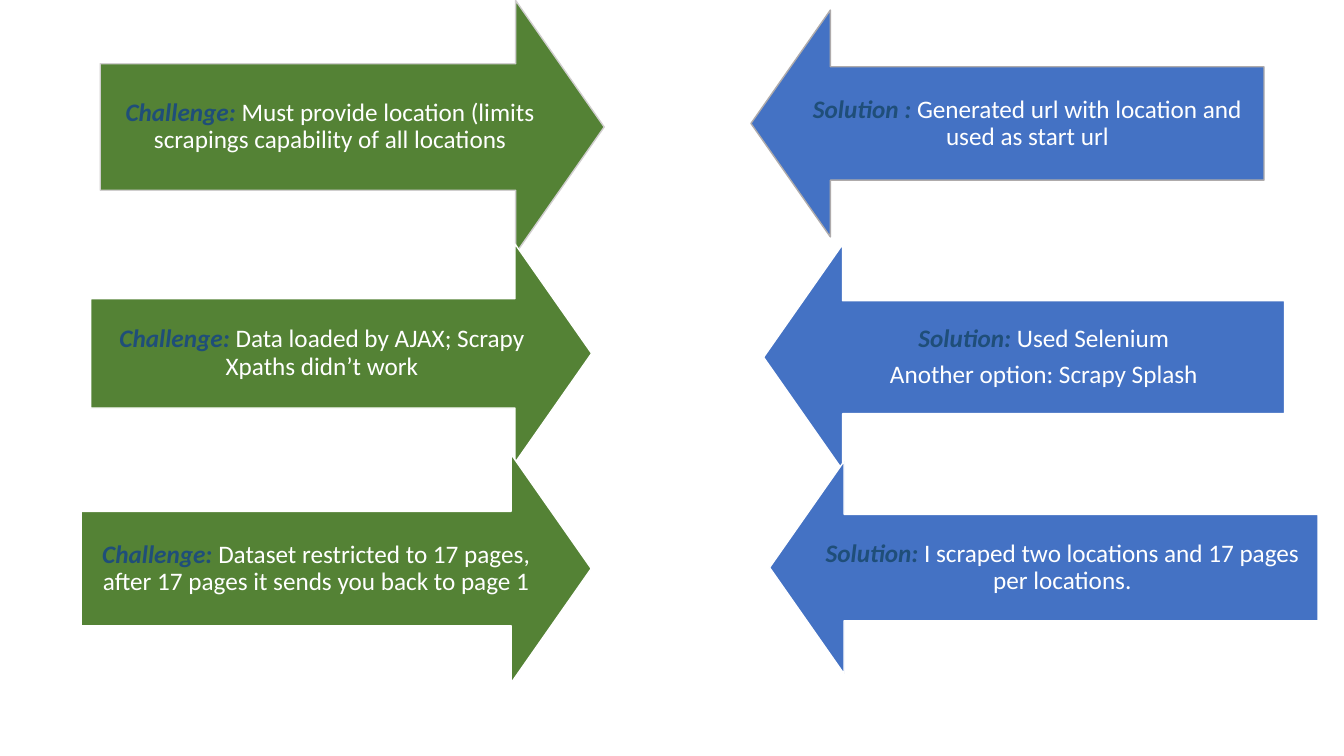
from pptx import Presentation
from pptx.dml.color import RGBColor
from pptx.enum import shapes, text
from pptx.util import Pt

WHITE, LABEL_BLUE = "FFFFFF", "1F4E79"
SIDES = {
    "Challenge": {"fill": "548235", "rotation": 270},
    "Solution": {"fill": "4472C4", "rotation": 90},
}
# side, label, lines, outline, (left, middle, length, breadth)
ARROWS = [
    ("Challenge", "Challenge: ",
     ["Must provide location (limits scrapings capability of all locations"],
     "D0CECE", (71.6, 90.7, 360, 180.7)),
    ("Solution", "Solution : ",
     ["Generated url with location and used as start url"],
     "AFABAB", (536.4, 88.2, 366.5, 162)),
    ("Challenge", "Challenge: ",
     ["Data loaded by AJAX; Scrapy Xpaths didn’t work"],
     WHITE, (64.8, 252.4, 357.8, 156.2)),
    ("Solution", "Solution: ",
     ["Used Selenium", "Another option: Scrapy Splash"],
     WHITE, (545.4, 255.2, 372.2, 161.3)),
    ("Challenge", "Challenge: ",
     ["Dataset restricted to 17 pages, after 17 pages it sends you back to page 1"],
     WHITE, (58, 406.1, 364.3, 163.4)),
    ("Solution", "Solution: ",
     ["I scraped two locations and 17 pages per locations."],
     WHITE, (549.7, 405.4, 391.7, 151.9)),
]
SHAFT, HEAD = 0.5, 0.35
INSET = 10
FONT_SIZE = 18


def color(hex_value):
    return RGBColor.from_string(hex_value)


def add_arrow(slide, side, outline, left, middle, length, breadth):
    arrow = slide.shapes.add_shape(
        shapes.MSO_SHAPE.DOWN_ARROW,
        Pt(left + (length - breadth) / 2), Pt(middle - length / 2),
        Pt(breadth), Pt(length))
    arrow.rotation = SIDES[side]["rotation"]
    arrow.adjustments[0] = SHAFT
    arrow.adjustments[1] = HEAD
    arrow.shadow.inherit = False
    arrow.fill.solid()
    arrow.fill.fore_color.rgb = color(SIDES[side]["fill"])
    arrow.line.color.rgb = color(outline)
    arrow.line.width = Pt(1)


def add_message(slide, side, label, lines, left, middle, length, breadth):
    half_head = breadth * HEAD / 2
    height = breadth * SHAFT
    if side == "Solution":
        left += half_head
    message = slide.shapes.add_textbox(
        Pt(left), Pt(middle - height / 2), Pt(length - half_head), Pt(height))
    frame = message.text_frame
    frame.word_wrap = True
    frame.vertical_anchor = text.MSO_ANCHOR.MIDDLE
    frame.margin_left = frame.margin_right = Pt(INSET)
    frame.margin_top = frame.margin_bottom = Pt(INSET)
    for index, line in enumerate(lines):
        paragraph = frame.add_paragraph() if index else frame.paragraphs[0]
        paragraph.alignment = text.PP_ALIGN.CENTER
        paragraph.line_spacing = 0.9
        paragraph.space_after = Pt(FONT_SIZE * 0.35)
        paragraph.font.name = "Calibri"
        paragraph.font.size = Pt(FONT_SIZE)
        paragraph.font.color.rgb = color(WHITE)
        if index == 0:
            heading = paragraph.add_run()
            heading.text = label
            heading.font.bold = heading.font.italic = True
            heading.font.color.rgb = color(LABEL_BLUE)
        paragraph.add_run().text = line


def main():
    deck = Presentation()
    deck.slide_width, deck.slide_height = Pt(960), Pt(540)
    slide = deck.slides.add_slide(deck.slide_layouts[6])
    for side, label, lines, outline, place in ARROWS:
        add_arrow(slide, side, outline, *place)
        add_message(slide, side, label, lines, *place)
    deck.save("out.pptx")


if __name__ == "__main__":
    main()
